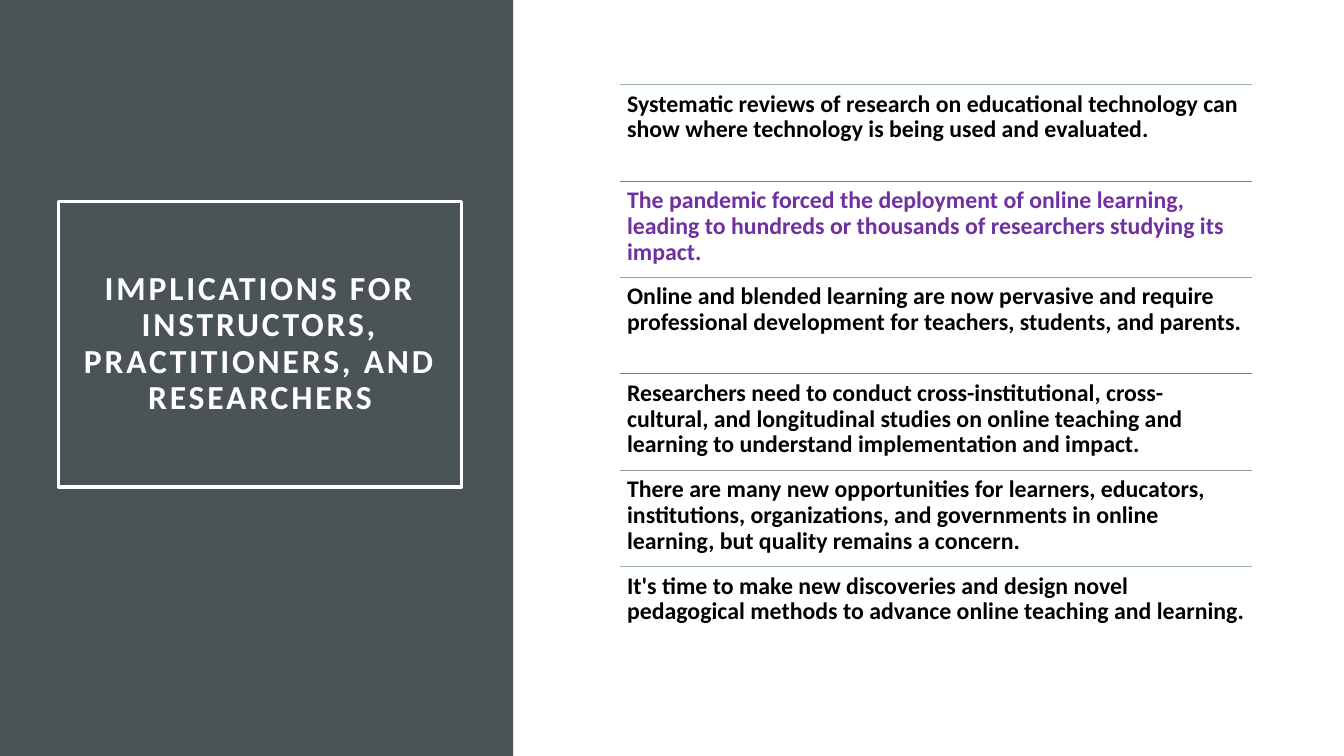
from dataclasses import dataclass

import pptx
import pptx.dml.color
import pptx.enum.shapes
import pptx.enum.text
import pptx.oxml.ns
import pptx.shapes.autoshape
import pptx.slide
import pptx.text.text
import pptx.util
from lxml import etree

Inches = pptx.util.Inches
Pt = pptx.util.Pt


@dataclass(frozen=True)
class Theme:
    font: str = "Calibri"
    panel: str = "4A5356"
    white: str = "FFFFFF"
    text: str = "000000"
    highlight: str = "7030A0"
    title_size: float = 24
    title_spacing: float = 2
    body_size: float = 17
    frame_width: float = 2.5
    rule_width: float = 0.5


@dataclass(frozen=True)
class Implication:
    text: str
    rule_color: str
    text_color: str


THEME = Theme()
TITLE = "IMPLICATIONS FOR INSTRUCTORS, PRACTITIONERS, AND RESEARCHERS"
IMPLICATIONS = [
    Implication("Systematic reviews of research on educational technology can show where "
                "technology is being used and evaluated.", "9BAFB5", THEME.text),
    Implication("The pandemic forced the deployment of online learning, leading to hundreds "
                "or thousands of researchers studying its impact.", "C96731", THEME.highlight),
    Implication("Online and blended learning are now pervasive and require professional "
                "development for teachers, students, and parents.", "9CA383", THEME.text),
    Implication("Researchers need to conduct cross-institutional, cross-cultural, and "
                "longitudinal studies on online teaching and learning to understand "
                "implementation and impact.", "87795D", THEME.text),
    Implication("There are many new opportunities for learners, educators, institutions, "
                "organizations, and governments in online learning, but quality remains "
                "a concern.", "A0988C", THEME.text),
    Implication("It's time to make new discoveries and design novel pedagogical methods to "
                "advance online teaching and learning.", "9BAFB5", THEME.text),
]

# List geometry in inches: rows share the height between the first and last rule
LIST_LEFT, LIST_WIDTH = 6.15, 6.27
FIRST_RULE, LAST_RULE = 0.84, 5.62
ROW_HEIGHT = (LAST_RULE - FIRST_RULE) / (len(IMPLICATIONS) - 1)


def rgb(color: str) -> pptx.dml.color.RGBColor:
    return pptx.dml.color.RGBColor.from_string(color)


def add_rectangle(page: pptx.slide.Slide, left: float, top: float, width: float,
                  height: float) -> pptx.shapes.autoshape.Shape:
    box = page.shapes.add_shape(pptx.enum.shapes.MSO_SHAPE.RECTANGLE, Inches(left),
                                Inches(top), Inches(width), Inches(height))
    box.shadow.inherit = False
    return box


def write_text(box: pptx.shapes.autoshape.Shape, text: str, size: float, color: str,
               inset: float) -> pptx.text.text._Paragraph:
    frame = box.text_frame
    frame.word_wrap = True
    frame.margin_left = frame.margin_right = Inches(inset)
    frame.margin_top = frame.margin_bottom = Inches(inset)
    para = frame.paragraphs[0]
    para.text = text
    para.line_spacing = 0.9
    para.font.name = THEME.font
    para.font.size = Pt(size)
    para.font.bold = True
    para.font.color.rgb = rgb(color)
    return para


def add_panel(page: pptx.slide.Slide) -> None:
    panel = add_rectangle(page, 0, 0, 5.09, 7.5)
    panel.fill.solid()
    panel.fill.fore_color.rgb = rgb(THEME.panel)
    panel.line.fill.background()


def add_title(page: pptx.slide.Slide) -> None:
    box = add_rectangle(page, 0.58, 2, 4, 2.83)
    box.fill.background()
    box.line.color.rgb = rgb(THEME.white)
    box.line.width = Pt(THEME.frame_width)
    para = write_text(box, TITLE, THEME.title_size, THEME.white, 0.2)
    para.alignment = pptx.enum.text.PP_ALIGN.CENTER
    box.text_frame.vertical_anchor = pptx.enum.text.MSO_ANCHOR.MIDDLE
    # Letter spacing is stored in hundredths of a point
    span = para.runs[0]
    span._r.get_or_add_rPr().set("spc", str(int(THEME.title_spacing * 100)))


def add_implication(page: pptx.slide.Slide, item: Implication, top: float) -> None:
    rule = page.shapes.add_connector(
        pptx.enum.shapes.MSO_CONNECTOR.STRAIGHT, Inches(LIST_LEFT), Inches(top),
        Inches(LIST_LEFT + LIST_WIDTH), Inches(top))
    rule.line.color.rgb = rgb(item.rule_color)
    rule.line.width = Pt(THEME.rule_width)
    etree.SubElement(rule._element.spPr, pptx.oxml.ns.qn("a:effectLst"))

    box = page.shapes.add_textbox(Inches(LIST_LEFT), Inches(top), Inches(LIST_WIDTH),
                                  Inches(ROW_HEIGHT))
    write_text(box, item.text, THEME.body_size, item.text_color, 0.07)


def main() -> None:
    deck = pptx.Presentation()
    deck.slide_width, deck.slide_height = Inches(13.33), Inches(7.5)
    page = deck.slides.add_slide(deck.slide_layouts[6])

    # Left panel with the framed title
    add_panel(page)
    add_title(page)

    # Ruled list of implications
    for index, item in enumerate(IMPLICATIONS):
        add_implication(page, item, FIRST_RULE + index * ROW_HEIGHT)

    deck.save("out.pptx")


if __name__ == "__main__":
    main()
